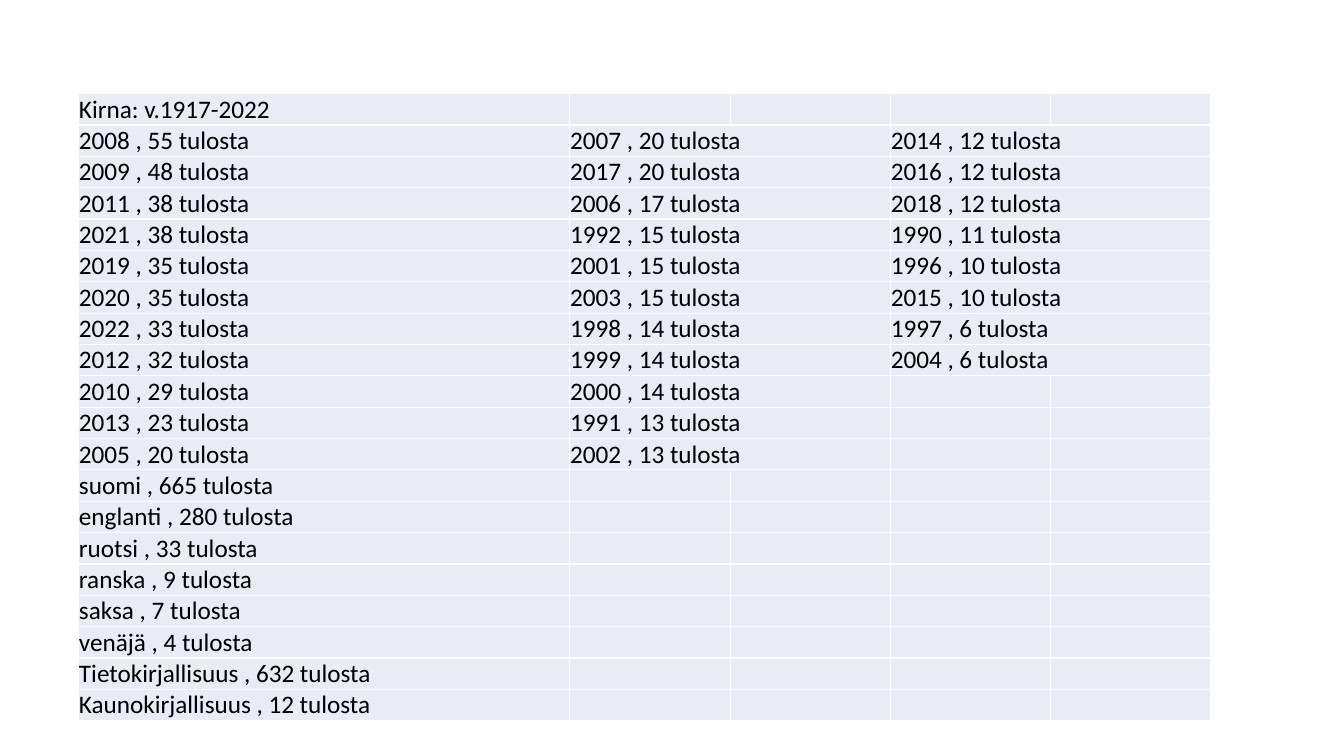
from lxml.etree import SubElement
from pptx import Presentation
from pptx.dml.color import RGBColor
from pptx.enum.text import MSO_ANCHOR as Anchor
from pptx.oxml.ns import qn
from pptx.util import Cm, Pt

# Content: hits per year, language and genre
TITLE = "Kirna: v.1917-2022"
UNIT = "tulosta"
MAIN_HITS = [
    ("2008", 55), ("2009", 48), ("2011", 38), ("2021", 38), ("2019", 35),
    ("2020", 35), ("2022", 33), ("2012", 32), ("2010", 29), ("2013", 23),
    ("2005", 20), ("suomi", 665), ("englanti", 280), ("ruotsi", 33),
    ("ranska", 9), ("saksa", 7), ("venäjä", 4), ("Tietokirjallisuus", 632),
    ("Kaunokirjallisuus", 12),
]
MIDDLE_HITS = [
    ("2007", 20), ("2017", 20), ("2006", 17), ("1992", 15), ("2001", 15),
    ("2003", 15), ("1998", 14), ("1999", 14), ("2000", 14), ("1991", 13),
    ("2002", 13),
]
RIGHT_HITS = [
    ("2014", 12), ("2016", 12), ("2018", 12), ("1990", 11), ("1996", 10),
    ("2015", 10), ("1997", 6), ("2004", 6),
]
HITS_BY_COLUMN = {0: MAIN_HITS, 1: MIDDLE_HITS, 3: RIGHT_HITS}

# Look and measures
COLORS = {"cell": "E9EBF5", "border": "FFFFFF", "text": "000000"}
FONT = "Calibri"
LEFT, TOP = Cm(1.98), Cm(2.36)
COLUMN_WIDTHS = [Cm(12.38)] + [Cm(4.04)] * 4
ROW_HEIGHT = Cm(0.79)
INSET = Cm(0.01)


def style_cell(cell):
    cell.margin_left = cell.margin_right = cell.margin_top = INSET
    cell.margin_bottom = 0
    cell.vertical_anchor = Anchor.MIDDLE
    properties = cell._tc.get_or_add_tcPr()
    for side in ("a:lnL", "a:lnR", "a:lnT", "a:lnB"):
        line = SubElement(properties, qn(side), w=str(Pt(1)))
        fill = SubElement(line, qn("a:solidFill"))
        SubElement(fill, qn("a:srgbClr"), val=COLORS["border"])
    cell.fill.solid()
    cell.fill.fore_color.rgb = RGBColor.from_string(COLORS["cell"])


def write(cell, text):
    run = cell.text_frame.paragraphs[0].add_run()
    run.text = text
    run.font.name = FONT
    run.font.size = Pt(18)
    run.font.color.rgb = RGBColor.from_string(COLORS["text"])


presentation = Presentation()
presentation.slide_width, presentation.slide_height = Cm(33.87), Cm(19.05)
slide = presentation.slides.add_slide(presentation.slide_layouts[6])

# Empty grid
row_count = len(MAIN_HITS) + 1
table = slide.shapes.add_table(
    row_count, len(COLUMN_WIDTHS), LEFT, TOP,
    sum(COLUMN_WIDTHS), ROW_HEIGHT * row_count).table
table.first_row = table.horz_banding = False
for column, width in zip(table.columns, COLUMN_WIDTHS):
    column.width = width
for row in table.rows:
    row.height = ROW_HEIGHT
for cell in table.iter_cells():
    style_cell(cell)

# Heading and hits; those right of the first column span two columns
write(table.cell(0, 0), TITLE)
for column, hits in HITS_BY_COLUMN.items():
    for row, (label, count) in enumerate(hits, start=1):
        cell = table.cell(row, column)
        if column > 0:
            cell.merge(table.cell(row, column + 1))
        write(cell, f"{label} , {count} {UNIT}")

presentation.save("out.pptx")
